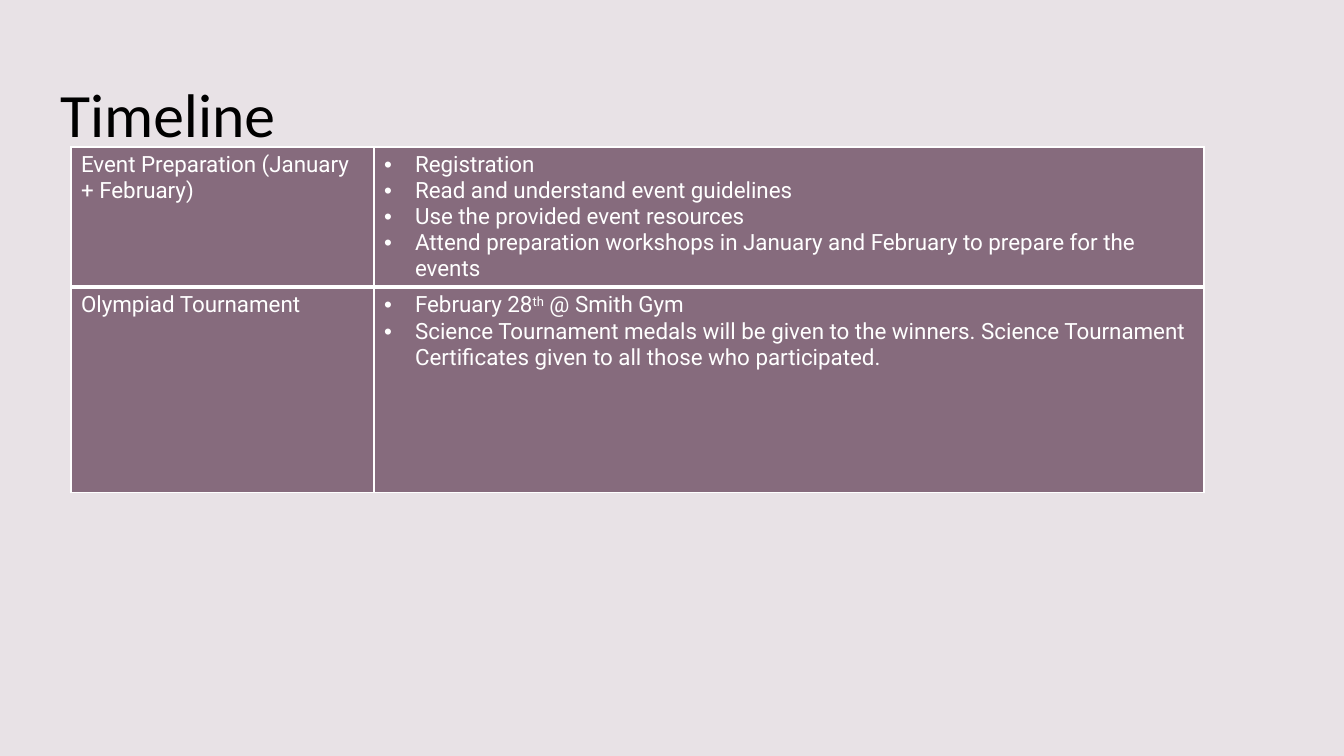
"""Build the Timeline slide with its two-stage event table."""
from lxml.etree import SubElement
from pptx import Presentation
from pptx.dml.color import RGBColor
from pptx.enum.text import MSO_ANCHOR, PP_ALIGN
from pptx.oxml.ns import qn
from pptx.util import Pt

MIDDLE = MSO_ANCHOR.MIDDLE
LEFT = PP_ALIGN.LEFT

TITLE = "Timeline"
STAGES = [
    ("Event Preparation (January + February)", [
        ["Registration"],
        ["Read and understand event guidelines"],
        ["Use the provided event resources"],
        ["Attend preparation workshops in January and February to prepare for the events"],
    ]),
    ("Olympiad Tournament", [
        ["February 28", "th", " @ Smith Gym"],
        ["Science Tournament medals will be given to the winners. "
         "Science Tournament Certificates given to all those who participated."],
    ]),
]
RAISED = "th"
PAPER, PLUM, WHITE, BLACK = "E8E2E6", "866B7D", "FFFFFF", "000000"
SLIDE = (1344, 756)
TITLE_BOX = (50, 40, 1202, 146)
TABLE_AT = (71, 147)
COLS = (303, 830)
ROWS = (140, 205)
INDENT = 31
RULES = [
    {"lnL": 1, "lnR": 1, "lnT": 1, "lnB": 3},
    {"lnL": 1, "lnR": 1, "lnT": 3, "lnB": 1},
]
SCALE = 12192000 / SLIDE[0]


def px(size):
    return round(size * SCALE)


def paint(fill, color):
    fill.solid()
    fill.fore_color.rgb = RGBColor.from_string(color)


def style(para, face, size, color):
    para.alignment = LEFT
    para.font.name = face
    para.font.size = Pt(size)
    para.font.color.rgb = RGBColor.from_string(color)


def bullet(para):
    props = para._p.get_or_add_pPr()
    props.set("marL", str(px(INDENT)))
    props.set("indent", str(-px(INDENT)))
    SubElement(props, qn("a:buFont"), typeface="Arial")
    SubElement(props, qn("a:buChar"), char="•")


def border(cell, rules):
    props = cell._tc.get_or_add_tcPr()
    for side, width in rules.items():
        line = SubElement(props, qn(f"a:{side}"), w=str(Pt(width)))
        fill = SubElement(line, qn("a:solidFill"))
        SubElement(fill, qn("a:srgbClr"), val=WHITE)


def write(cell, items, marked):
    frame = cell.text_frame
    for i, parts in enumerate(items):
        para = frame.add_paragraph() if i else frame.paragraphs[0]
        if marked:
            bullet(para)
        style(para, "Roboto", 16, WHITE)
        for part in parts:
            run = para.add_run()
            run.text = part
            if part == RAISED:
                run._r.get_or_add_rPr().set("baseline", "30000")


def main():
    deck = Presentation()
    deck.slide_width, deck.slide_height = map(px, SLIDE)
    slide = deck.slides.add_slide(deck.slide_layouts[5])
    paint(slide.background.fill, PAPER)

    title = slide.shapes.title
    title.left, title.top, title.width, title.height = map(px, TITLE_BOX)
    title.text_frame.text = TITLE
    title.text_frame.vertical_anchor = MIDDLE
    style(title.text_frame.paragraphs[0], "Calibri", 44, BLACK)

    box = map(px, (*TABLE_AT, sum(COLS), sum(ROWS)))
    table = slide.shapes.add_table(len(ROWS), len(COLS), *box).table
    table.first_row = table.horz_banding = False
    for col, width in zip(table.columns, COLS):
        col.width = px(width)
    for row, height, rules, (stage, tasks) in zip(table.rows, ROWS, RULES, STAGES):
        row.height = px(height)
        for cell, items, marked in zip(row.cells, ([[stage]], tasks), (False, True)):
            border(cell, rules)
            paint(cell.fill, PLUM)
            write(cell, items, marked)
    deck.save("out.pptx")


if __name__ == "__main__":
    main()
